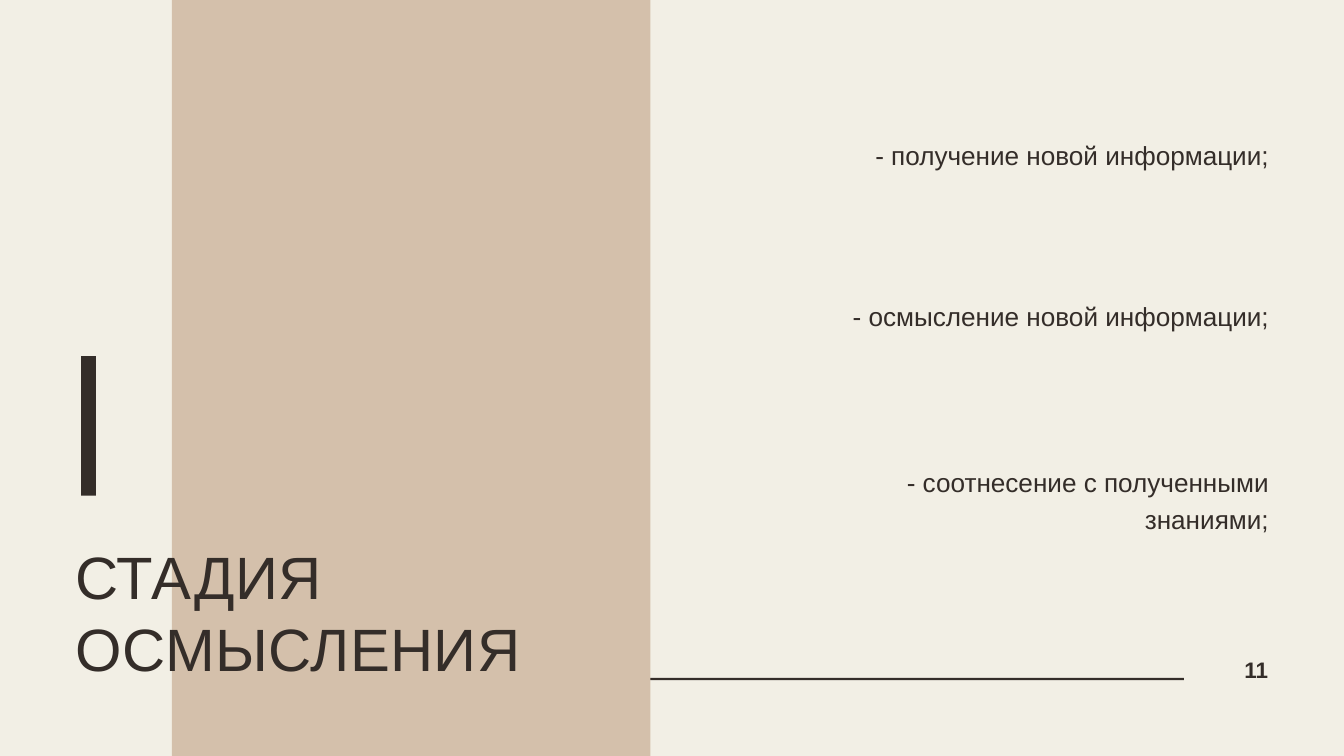
from dataclasses import dataclass

import pptx
import pptx.dml.color
import pptx.enum.shapes
import pptx.enum.text
import pptx.util

Cm = pptx.util.Cm
Align = pptx.enum.text.PP_ALIGN


@dataclass(frozen=True)
class Theme:
    paper: str = "F2EFE5"
    sand: str = "D4C0AB"
    ink: str = "342D29"
    font: str = "Arial"
    title_size: float = 64
    body_size: float = 28
    number_size: float = 24


def color(value):
    return pptx.dml.color.RGBColor.from_string(value)


def write_text(para, text, *, font, size, ink, leading, bold=False,
               align=Align.LEFT, tracking=None):
    """Add one formatted span; leading is in points, tracking in 1/100 pt."""
    para.alignment = align
    para.line_spacing = pptx.util.Pt(leading)
    span = para.add_run()
    span.text = text
    span.font.name = font
    span.font.size = pptx.util.Pt(size)
    span.font.bold = bold
    span.font.color.rgb = color(ink)
    if tracking is not None:
        span.font._element.set("spc", str(tracking))


class PageBuilder:
    def __init__(self, page, theme):
        self.page = page
        self.theme = theme

    def background(self):
        fill = self.page.background.fill
        fill.solid()
        fill.fore_color.rgb = color(self.theme.paper)

    def block(self, left, top, width, height, fill):
        block = self.page.shapes.add_shape(
            pptx.enum.shapes.MSO_SHAPE.RECTANGLE,
            Cm(left), Cm(top), Cm(width), Cm(height))
        block.shadow.inherit = False
        block.fill.solid()
        block.fill.fore_color.rgb = color(fill)
        block.line.fill.background()

    def text(self, text, left, top, width, height, parent=None, **style):
        shapes = (parent or self.page).shapes
        box = shapes.add_textbox(Cm(left), Cm(top), Cm(width), Cm(height))
        frame = box.text_frame
        frame.word_wrap = True
        frame.auto_size = pptx.enum.text.MSO_AUTO_SIZE.SHAPE_TO_FIT_TEXT
        frame.margin_left = frame.margin_right = 0
        frame.margin_top = frame.margin_bottom = 0
        write_text(frame.paragraphs[0], text, font=self.theme.font,
                   ink=self.theme.ink, **style)

    def points(self, points, left, width):
        group = self.page.shapes.add_group_shape()
        for text, top, height in points:
            self.text(text, left, top, width, height, parent=group,
                      size=self.theme.body_size, leading=39.2,
                      align=Align.RIGHT)


def main():
    theme = Theme()
    deck = pptx.Presentation()
    deck.slide_width, deck.slide_height = Cm(50.8), Cm(28.58)
    builder = PageBuilder(deck.slides.add_slide(deck.slide_layouts[6]), theme)

    # Background, footer rule and wide band
    builder.background()
    builder.block(19.25, 25.63, 25.5, 0.08, theme.ink)
    builder.block(6.5, -1.14, 18.08, 31.09, theme.sand)

    # Title
    builder.text("СТАДИЯ ОСМЫСЛЕНИЯ", 2.84, 20.42, 17.45, 5.36,
                 size=theme.title_size, leading=76.8, tracking=60)

    # Points: text, top, height
    builder.points([
        ("- получение новой информации;", 5.08, 1.3),
        ("- осмысление новой информации;", 11.15, 1.3),
        ("- соотнесение с полученными знаниями;", 17.45, 2.64),
    ], left=29.46, width=18.49)

    # Page number
    builder.text("11", 46, 24.79, 1.93, 1.02, size=theme.number_size,
                 leading=28.8, bold=True, align=Align.RIGHT)

    # Upright bar above the title
    builder.block(3.07, 13.46, 0.56, 5.28, theme.ink)

    deck.save("out.pptx")


if __name__ == "__main__":
    main()
